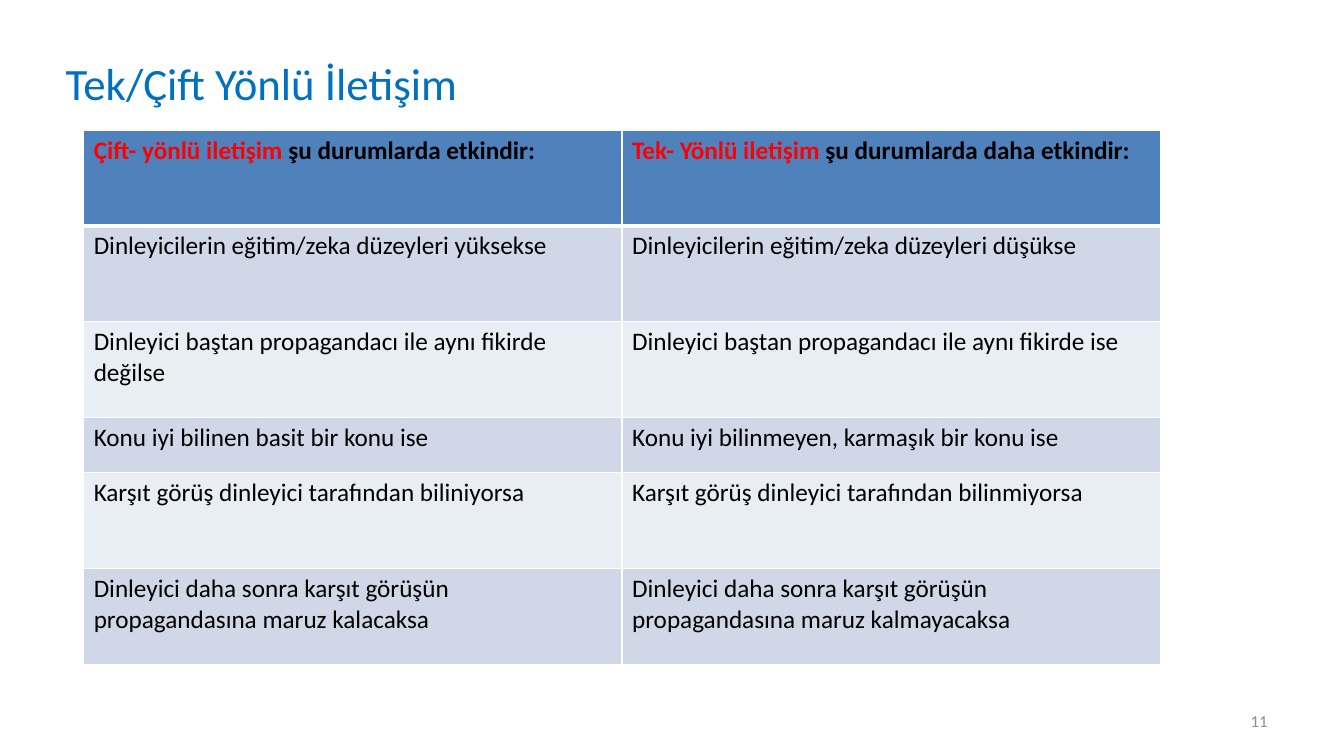
from lxml import etree
from pptx import Presentation
from pptx.dml.color import RGBColor
from pptx.enum import text as t
from pptx.oxml import ns
from pptx.util import Inches, Pt

FONT = "Calibri"
TITLE_BLUE = RGBColor(0x00, 0x70, 0xC0)
RED = RGBColor(0xFF, 0x00, 0x00)
BLACK = RGBColor(0x00, 0x00, 0x00)
GREY = RGBColor(0x8C, 0x8C, 0x8C)
HEADER_BLUE = RGBColor(0x4F, 0x81, 0xBD)
BAND_DARK = RGBColor(0xD0, 0xD8, 0xE8)
BAND_LIGHT = RGBColor(0xE9, 0xED, 0xF4)
WHITE = RGBColor(0xFF, 0xFF, 0xFF)

# Each cell is a list of (wording, colour) runs.
HEADERS = [
    [("Çift- yönlü iletişim ", RED), ("şu durumlarda etkindir:", BLACK)],
    [("Tek- Yönlü iletişim ", RED), ("şu durumlarda daha etkindir:", BLACK)],
]
CONDITIONS = [
    ("Dinleyicilerin eğitim/zeka düzeyleri yüksekse",
     "Dinleyicilerin eğitim/zeka düzeyleri düşükse"),
    ("Dinleyici baştan propagandacı ile aynı fikirde değilse",
     "Dinleyici baştan propagandacı ile aynı fikirde ise"),
    ("Konu iyi bilinen basit bir konu ise",
     "Konu iyi bilinmeyen, karmaşık bir konu ise"),
    ("Karşıt görüş dinleyici tarafından biliniyorsa",
     "Karşıt görüş dinleyici tarafından bilinmiyorsa"),
    ("Dinleyici daha sonra karşıt görüşün propagandasına maruz kalacaksa",
     "Dinleyici daha sonra karşıt görüşün propagandasına maruz kalmayacaksa"),
]
ROW_HEIGHTS = [0.95, 0.95, 0.95, 0.55, 0.95, 0.95]


def style_run(run, size, color, bold=False):
    run.font.name = FONT
    run.font.size = Pt(size)
    run.font.bold = bold
    run.font.color.rgb = color


def add_borders(cell, widths):
    """Draw white borders; widths are points for left, right, top, bottom."""
    properties = cell._tc.get_or_add_tcPr()
    for index, (side, width) in enumerate(zip("LRTB", widths)):
        line = etree.Element(ns.qn(f"a:ln{side}"), w=str(Pt(width)))
        fill = etree.SubElement(line, ns.qn("a:solidFill"))
        etree.SubElement(fill, ns.qn("a:srgbClr"), val=str(WHITE))
        properties.insert(index, line)


prs = Presentation()
prs.slide_width, prs.slide_height = Inches(13.33), Inches(7.5)
slide = prs.slides.add_slide(prs.slide_layouts[5])

title = slide.shapes.title
title.left, title.top = Inches(0.55), Inches(0.5)
title.width, title.height = Inches(11.75), Inches(0.75)
heading = title.text_frame
heading.text = "Tek/Çift Yönlü İletişim"
heading.auto_size = t.MSO_AUTO_SIZE.NONE
heading.vertical_anchor = t.MSO_ANCHOR.TOP
heading.paragraphs[0].alignment = t.PP_ALIGN.LEFT
style_run(heading.paragraphs[0].runs[0], 32, TITLE_BLUE)

rows = [HEADERS] + [[[(wording, BLACK)] for wording in pair] for pair in CONDITIONS]
comparison = slide.shapes.add_table(
    len(rows), 2, Inches(0.83), Inches(1.29), Inches(10.68), Inches(sum(ROW_HEIGHTS))
).table

for r, (row, height) in enumerate(zip(rows, ROW_HEIGHTS)):
    comparison.rows[r].height = Inches(height)
    is_header = r == 0
    band = HEADER_BLUE if is_header else (BAND_DARK if r % 2 else BAND_LIGHT)
    for c, runs in enumerate(row):
        cell = comparison.cell(r, c)
        cell.fill.solid()
        cell.fill.fore_color.rgb = band
        add_borders(cell, (1, 1, 3 if r == 1 else 1, 3 if is_header else 1))
        for wording, color in runs:
            run = cell.text_frame.paragraphs[0].add_run()
            run.text = wording
            style_run(run, 18, color, bold=is_header)

page_number = slide.shapes.add_textbox(
    Inches(9.56), Inches(6.95), Inches(3.11), Inches(0.4)
).text_frame
page_number.word_wrap = True
page_number.vertical_anchor = t.MSO_ANCHOR.MIDDLE
page_number.text = "11"
page_number.paragraphs[0].alignment = t.PP_ALIGN.RIGHT
style_run(page_number.paragraphs[0].runs[0], 12, GREY)

prs.save("out.pptx")
